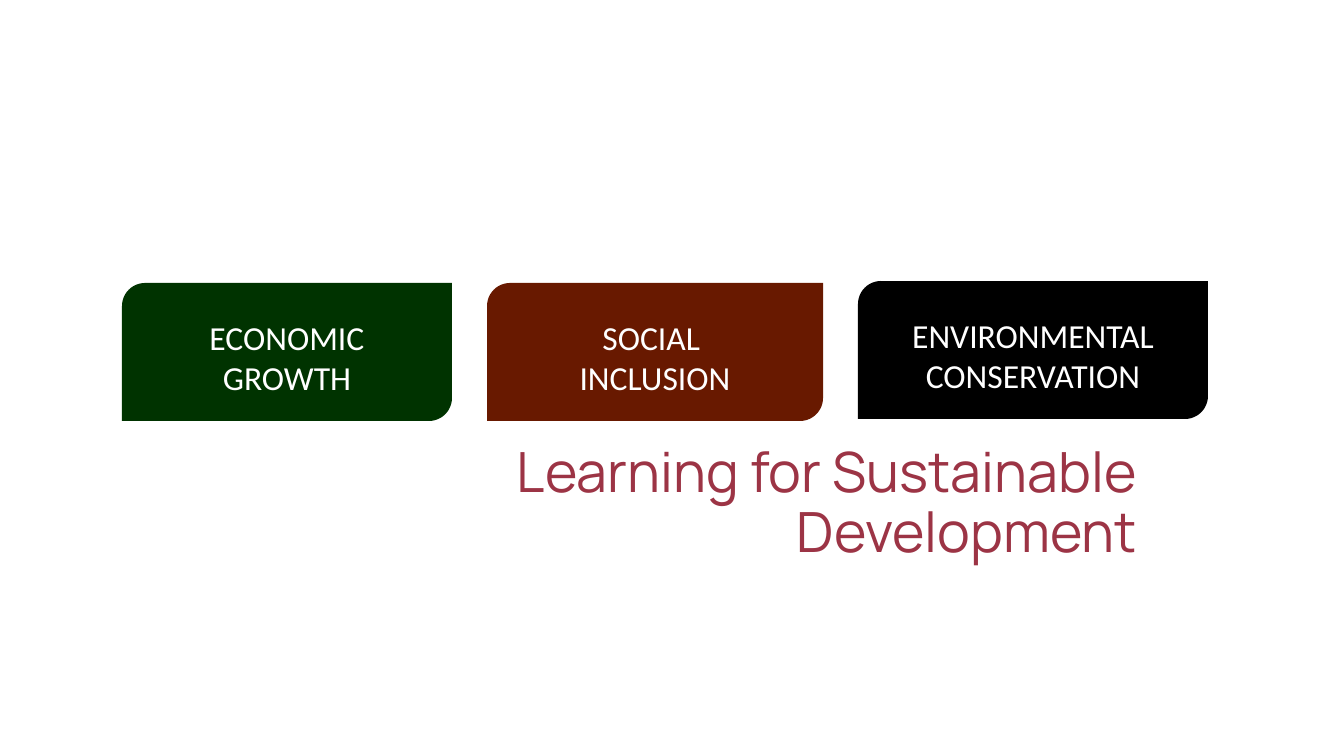
import pptx
import pptx.util
import pptx.dml.color
import pptx.enum.shapes
import pptx.enum.text

PX = 914400 / 100.8
GREEN = pptx.dml.color.RGBColor(0x00, 0x33, 0x00)
RUST = pptx.dml.color.RGBColor(0x68, 0x19, 0x00)
BLACK = pptx.dml.color.RGBColor(0x00, 0x00, 0x00)
WHITE = pptx.dml.color.RGBColor(0xFF, 0xFF, 0xFF)
CRIMSON = pptx.dml.color.RGBColor(0x9C, 0x34, 0x45)


def px(length):
    return pptx.util.Emu(round(length * PX))


def add_span(para, text, font, size, color):
    span = para.add_run()
    span.text = text
    span.font.name = font
    span.font.size = pptx.util.Pt(size)
    span.font.color.rgb = color


deck = pptx.Presentation()
deck.slide_width = px(1344)
deck.slide_height = px(756)
page = deck.slides.add_slide(deck.slide_layouts[5])

title = page.shapes.title
title.left, title.top, title.width, title.height = px(158), px(435), px(989), px(139)
title.text_frame.word_wrap = True
title.text_frame.auto_size = pptx.enum.text.MSO_AUTO_SIZE.NONE
title.text_frame.vertical_anchor = pptx.enum.text.MSO_ANCHOR.MIDDLE
para = title.text_frame.paragraphs[0]
para.alignment = pptx.enum.text.PP_ALIGN.RIGHT
para.line_spacing = 0.9
add_span(para, "Learning for Sustainable Development", "Manrope", 39.6, CRIMSON)

pillars = [
    (122, 283, 330, GREEN, ["ECONOMIC", "GROWTH"]),
    (487, 283, 336, RUST, ["SOCIAL ", "INCLUSION"]),
    (858, 281, 350, BLACK, ["ENVIRONMENTAL", "CONSERVATION"]),
]
for left, top, width, color, lines in pillars:
    box = page.shapes.add_shape(
        pptx.enum.shapes.MSO_SHAPE.ROUND_2_DIAG_RECTANGLE,
        px(left), px(top), px(width), px(138))
    box.shadow.inherit = False
    box.fill.solid()
    box.fill.fore_color.rgb = color
    box.line.fill.background()
    frame = box.text_frame
    frame.word_wrap = True
    frame.vertical_anchor = pptx.enum.text.MSO_ANCHOR.MIDDLE
    frame.margin_left = frame.margin_right = frame.margin_bottom = px(10)
    frame.margin_top = px(20)
    para = frame.paragraphs[0]
    para.alignment = pptx.enum.text.PP_ALIGN.CENTER
    add_span(para, lines[0], "Calibri", 24, WHITE)
    para.add_line_break()
    add_span(para, lines[1], "Calibri", 24, WHITE)

deck.save("out.pptx")
